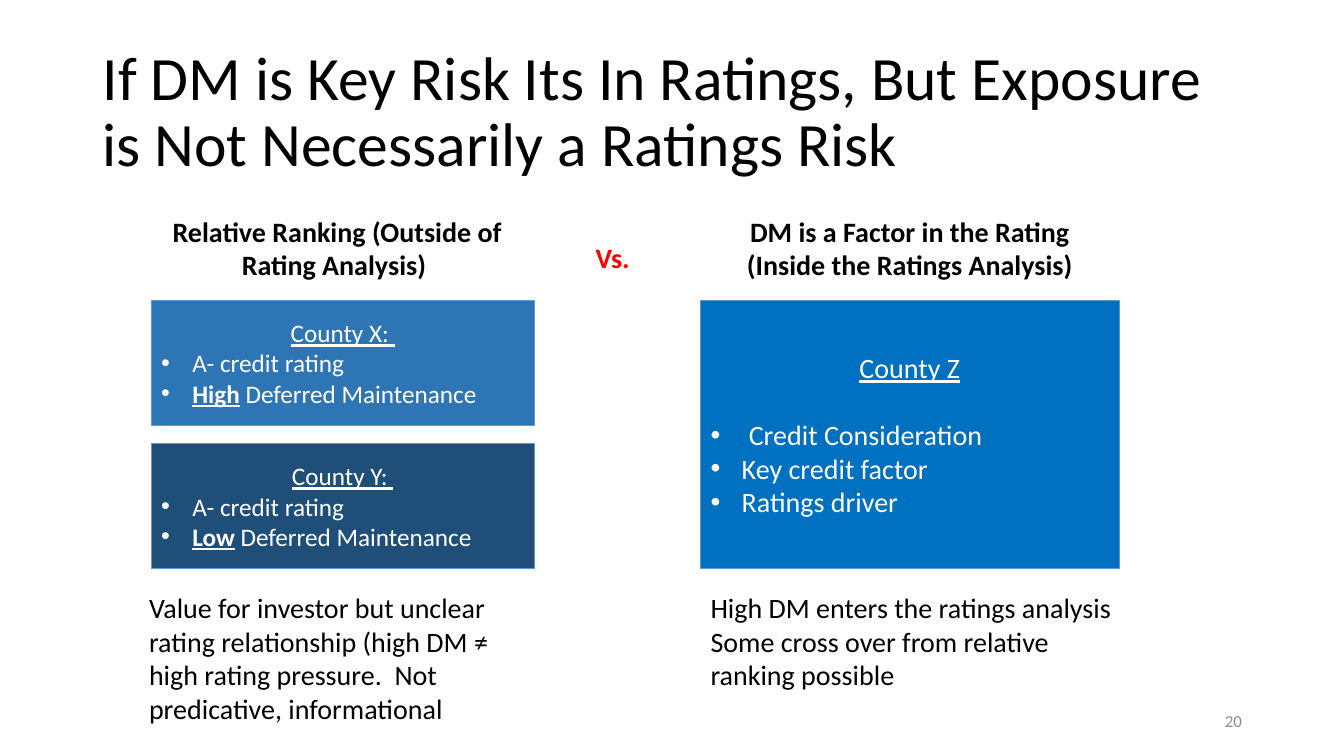
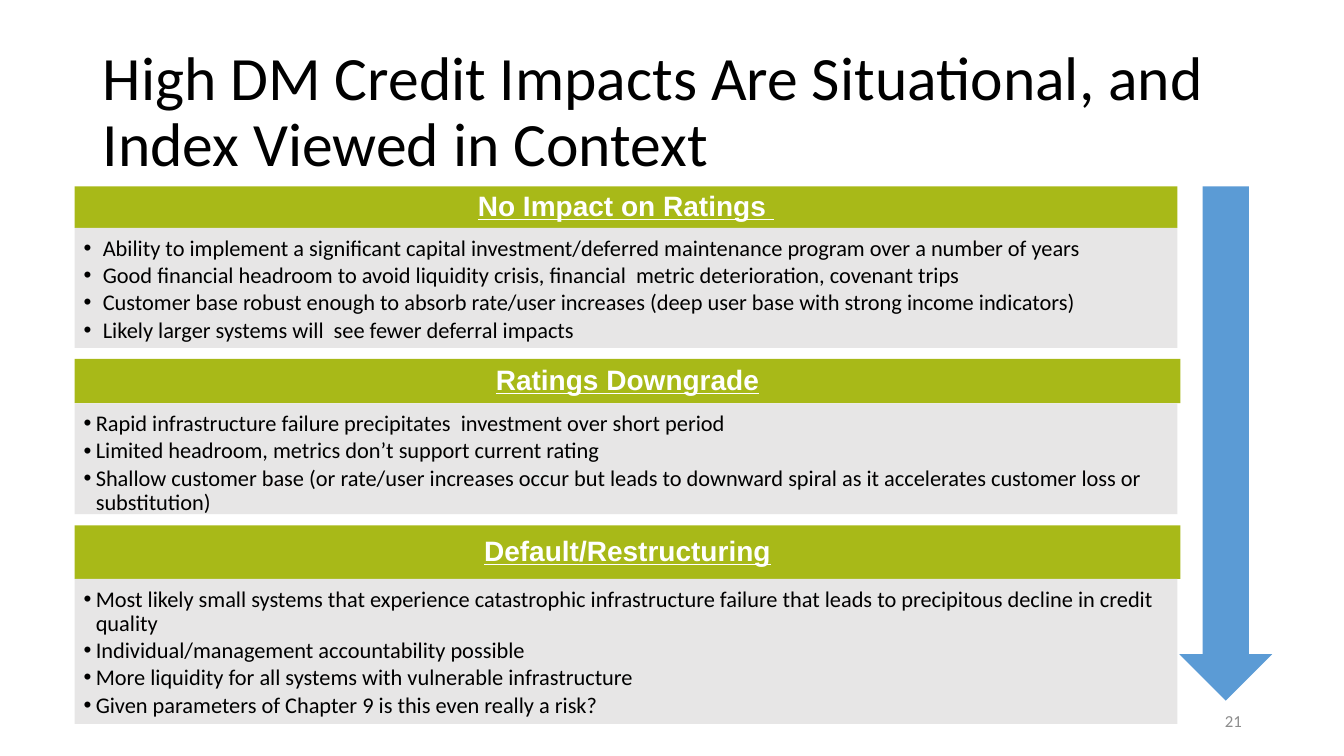
"""Build two slides on how deferred maintenance (DM) bears on credit ratings."""
from dataclasses import dataclass, replace

from lxml.etree import SubElement
from pptx import Presentation
from pptx.dml.color import RGBColor
from pptx.enum.shapes import MSO_SHAPE
from pptx.enum.text import MSO_ANCHOR, PP_ALIGN
from pptx.oxml.ns import qn
from pptx.util import Inches, Pt

SLIDE_WIDTH, SLIDE_HEIGHT = Inches(13.33), Inches(7.5)

BLACK = RGBColor(0x00, 0x00, 0x00)
WHITE = RGBColor(0xFF, 0xFF, 0xFF)
RED = RGBColor(0xFF, 0x00, 0x00)
GREY = RGBColor(0x8C, 0x8C, 0x8C)
PALE_GREY = RGBColor(0xE7, 0xE6, 0xE6)
OLIVE = RGBColor(0xA8, 0xB9, 0x18)
SKY = RGBColor(0x5B, 0x9B, 0xD5)
MID_BLUE = RGBColor(0x2E, 0x75, 0xB6)
NAVY = RGBColor(0x1F, 0x4E, 0x79)
BRIGHT_BLUE = RGBColor(0x00, 0x70, 0xC0)


@dataclass(frozen=True)
class Style:
    """Look of a paragraph; indent is the hanging bullet indent in inches."""
    size: int
    color: RGBColor = BLACK
    font: str = "Calibri"
    bold: bool = False
    underline: bool = False
    align: PP_ALIGN = PP_ALIGN.LEFT
    line_spacing: float = 1.0
    after: float = 0
    indent: float = 0


TITLE = Style(44, line_spacing=0.9)
PAGE_NUMBER = Style(12, GREY, align=PP_ALIGN.RIGHT)
NOTE = Style(20)
COLUMN_HEAD = Style(20, bold=True, align=PP_ALIGN.CENTER)
VERSUS = Style(20, RED, bold=True)
COUNTY = Style(18, WHITE, underline=True, align=PP_ALIGN.CENTER)
COUNTY_POINT = Style(18, WHITE, indent=0.31)
BAND = Style(20, WHITE, "Arial", True, True, PP_ALIGN.CENTER, 0.9)
BAND_POINT = Style(16, line_spacing=0.9, after=2.2)

CARD_TOP, CARD_HEIGHT, CARD_PITCH = 39.73, 16.53, 18.93
HEAD_TOP, NOTE_TOP = 27.67, 77.47
BAND_LEFT, BAND_TOP, BAND_GAP, PANEL_WIDTH = 5.55, 24.67, 1.47, 82.05

COUNTIES = [
    ("County X: ", "High", MID_BLUE),
    ("County Y: ", "Low", NAVY),
]

SECTIONS = [
    ("No Impact on Ratings ", 82.05, 5.47, 15.87, 0.19, [
        "Ability to implement a significant capital investment/deferred maintenance program over a number of years",
        "Good financial headroom to avoid liquidity crisis, financial  metric deterioration, covenant trips",
        "Customer base robust enough to absorb rate/user increases (deep user base with strong income indicators)",
        "Likely larger systems will  see fewer deferral impacts",
    ]),
    ("Ratings Downgrade", 82.28, 5.87, 14.67, 0.12, [
        "Rapid infrastructure failure precipitates  investment over short period",
        "Limited headroom, metrics don’t support current rating",
        "Shallow customer base (or rate/user increases occur but leads to downward spiral"
        " as it accelerates customer loss or substitution)",
    ]),
    ("Default/Restructuring", 82.28, 7.07, 19.2, 0.12, [
        "Most likely small systems that experience catastrophic infrastructure failure"
        " that leads to precipitous decline in credit quality",
        "Individual/management accountability possible",
        "More liquidity for all systems with vulnerable infrastructure",
        "Given parameters of Chapter 9 is this even really a risk?",
    ]),
]


def area(left, top, width, height):
    """Turn percentages of the slide's size into lengths."""
    return (int(SLIDE_WIDTH * left / 100), int(SLIDE_HEIGHT * top / 100),
            int(SLIDE_WIDTH * width / 100), int(SLIDE_HEIGHT * height / 100))


def add_bullet(paragraph, indent):
    """Give a paragraph a hanging round bullet."""
    properties = paragraph._p.get_or_add_pPr()
    properties.set("marL", str(Inches(indent)))
    properties.set("indent", str(-Inches(indent)))
    SubElement(properties, qn("a:buFont")).set("typeface", "Arial")
    SubElement(properties, qn("a:buChar")).set("char", "•")


def write(frame, lines, anchor=MSO_ANCHOR.TOP):
    """Fill a frame with (style, text) lines; a text pair has a stressed lead."""
    frame.word_wrap = True
    frame.vertical_anchor = anchor
    for index, (style, text) in enumerate(lines):
        paragraph = frame.add_paragraph() if index else frame.paragraphs[0]
        if style.indent:
            add_bullet(paragraph, style.indent)
        paragraph.alignment = style.align
        paragraph.line_spacing = style.line_spacing
        paragraph.space_after = Pt(style.after)
        font = paragraph.font
        font.name, font.size = style.font, Pt(style.size)
        font.bold, font.underline = style.bold, style.underline
        font.color.rgb = style.color
        lead, rest = ("", text) if isinstance(text, str) else text
        if lead:
            stressed = paragraph.add_run()
            stressed.text = lead
            stressed.font.bold = stressed.font.underline = True
        paragraph.add_run().text = rest


def add_text(slide, place, style, *texts, anchor=MSO_ANCHOR.TOP):
    """Add a text box whose paragraphs share one style."""
    box = slide.shapes.add_textbox(*area(*place))
    write(box.text_frame, [(style, text) for text in texts], anchor)


def add_block(slide, place, fill, outline=None, kind=MSO_SHAPE.RECTANGLE):
    """Add a flat filled shape and return it."""
    block = slide.shapes.add_shape(kind, *area(*place))
    block.shadow.inherit = False
    block.fill.solid()
    block.fill.fore_color.rgb = fill
    if outline is None:
        block.line.fill.background()
    else:
        block.line.color.rgb = outline
        block.line.width = Pt(0.5)
    return block


def add_card(slide, place, fill, lines):
    """Add an outlined county card."""
    card = add_block(slide, place, fill, SKY)
    write(card.text_frame, lines, MSO_ANCHOR.MIDDLE)


def add_section(slide, top, section):
    """Add a band with its bullet panel and return the panel's bottom."""
    heading, band_width, band_height, panel_height, indent, points = section
    band = add_block(slide, (BAND_LEFT, top, band_width, band_height), OLIVE)
    write(band.text_frame, [(BAND, heading)], MSO_ANCHOR.MIDDLE)
    panel_top = top + band_height
    panel = add_block(slide, (BAND_LEFT, panel_top, PANEL_WIDTH, panel_height), PALE_GREY)
    frame = panel.text_frame
    frame.margin_left, frame.margin_top = Inches(0.09), Inches(0.09)
    frame.margin_right, frame.margin_bottom = Inches(0.12), Inches(0.13)
    point_style = replace(BAND_POINT, indent=indent)
    write(frame, [(point_style, point) for point in points])
    return panel_top + panel_height


def add_titled_slide(deck, title, number):
    """Add a blank slide with the shared title and page number."""
    slide = deck.slides.add_slide(deck.slide_layouts[6])
    add_text(slide, (6.9, 5.33, 86.25, 19.33), TITLE, title, anchor=MSO_ANCHOR.MIDDLE)
    add_text(slide, (70.65, 92.67, 22.5, 5.33), PAGE_NUMBER, str(number), anchor=MSO_ANCHOR.MIDDLE)
    return slide


def build_comparison(deck):
    """Compare relative ranking with DM as a rating factor."""
    slide = add_titled_slide(
        deck, "If DM is Key Risk Its In Ratings, But Exposure is Not Necessarily a Ratings Risk", 20)
    for row, (county, level, fill) in enumerate(COUNTIES):
        place = (11.25, CARD_TOP + row * CARD_PITCH, 28.5, CARD_HEIGHT)
        add_card(slide, place, fill, [
            (COUNTY, county),
            (COUNTY_POINT, "A- credit rating"),
            (COUNTY_POINT, (level, " Deferred Maintenance")),
        ])
    add_text(slide, (10.35, HEAD_TOP, 29.48, 10.27), COLUMN_HEAD,
             "Relative Ranking (Outside of Rating Analysis) ")
    add_text(slide, (10.35, NOTE_TOP, 29.48, 19.33), NOTE,
             "Value for investor but unclear rating relationship (high DM ≠ high rating pressure."
             "  Not predicative, informational")

    add_text(slide, (52.13, HEAD_TOP, 31.13, 10.27), COLUMN_HEAD,
             "DM is a Factor in the Rating", "(Inside the Ratings Analysis)")
    point = replace(COUNTY_POINT, size=20)
    add_card(slide, (52.13, CARD_TOP, 31.13, CARD_PITCH + CARD_HEIGHT), BRIGHT_BLUE, [
        (replace(COUNTY, size=20, after=24), "County Z"),
        (replace(point, indent=0.38), "Credit Consideration"),
        (point, "Key credit factor"),
        (point, "Ratings driver"),
    ])
    add_text(slide, (52.13, NOTE_TOP, 32.33, 14.8), NOTE,
             "High DM enters the ratings analysis",
             "Some cross over from relative ranking possible")
    add_text(slide, (43.58, 31.2, 4.8, 5.87), VERSUS, "Vs.")


def build_impacts(deck):
    """Rank credit impacts from none to default beside a downward arrow."""
    slide = add_titled_slide(
        deck, "High DM Credit Impacts Are Situational, and Index Viewed in Context", 21)
    add_block(slide, (87.75, BAND_TOP, 6.9, 68), SKY, kind=MSO_SHAPE.DOWN_ARROW)
    top = BAND_TOP
    for section in SECTIONS:
        top = add_section(slide, top, section) + BAND_GAP


def main():
    """Build and save the deck."""
    deck = Presentation()
    deck.slide_width, deck.slide_height = SLIDE_WIDTH, SLIDE_HEIGHT
    build_comparison(deck)
    build_impacts(deck)
    deck.save("out.pptx")


if __name__ == "__main__":
    main()
